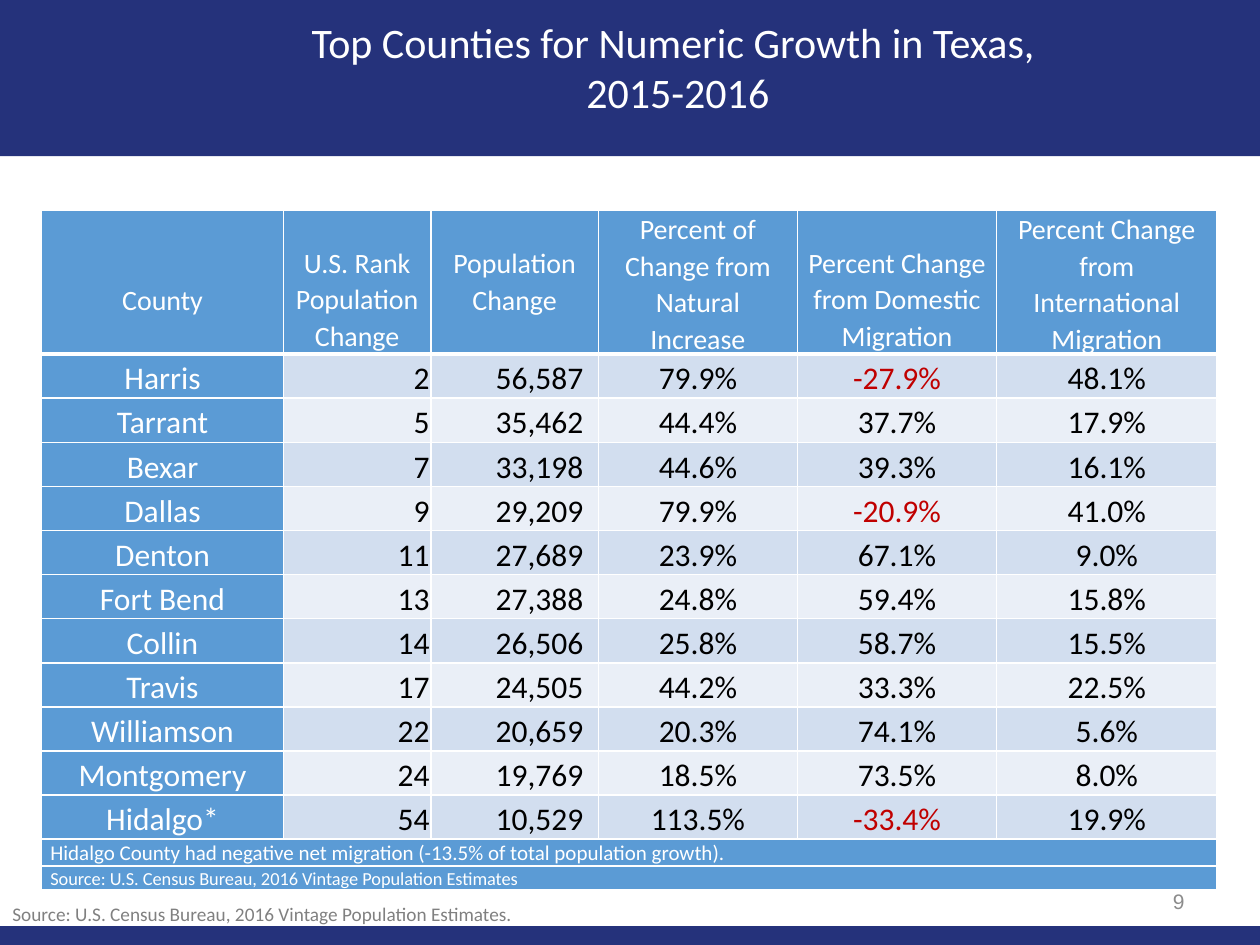
from lxml import etree
from pptx import Presentation
from pptx import util as u
from pptx.dml.color import RGBColor
from pptx.enum import shapes, text
from pptx.oxml.ns import qn

NAVY, BLUE, WHITE, BLACK, RED = "25327B", "5B9BD5", "FFFFFF", "000000", "C00000"
BANDS = ("D2DEEF", "EAEFF7")
LEFT, CENTER, RIGHT = text.PP_ALIGN.LEFT, text.PP_ALIGN.CENTER, text.PP_ALIGN.RIGHT
TOP, MIDDLE, BOTTOM = (text.MSO_ANCHOR.TOP, text.MSO_ANCHOR.MIDDLE,
                       text.MSO_ANCHOR.BOTTOM)

COL_WIDTHS = (1.92, 1.17, 1.33, 1.58, 1.58, 1.75)
HEADER_HEIGHT, COUNTY_HEIGHT, NOTE_HEIGHTS = 1.13, 0.35, (0.21, 0.19)
HEADER_LINE = 0.29
# heading, lines of space left below it
HEADERS = (
    ("County", 1),
    ("U.S. Rank Population Change", 0),
    ("Population Change", 1),
    ("Percent of Change from Natural Increase", 0),
    ("Percent Change from Domestic Migration", 0),
    ("Percent Change from International Migration", 0),
)
COUNTIES = (
    ("Harris", "2", "56,587", "79.9%", "-27.9%", "48.1%"),
    ("Tarrant", "5", "35,462", "44.4%", "37.7%", "17.9%"),
    ("Bexar", "7", "33,198", "44.6%", "39.3%", "16.1%"),
    ("Dallas", "9", "29,209", "79.9%", "-20.9%", "41.0%"),
    ("Denton", "11", "27,689", "23.9%", "67.1%", "9.0%"),
    ("Fort Bend", "13", "27,388", "24.8%", "59.4%", "15.8%"),
    ("Collin", "14", "26,506", "25.8%", "58.7%", "15.5%"),
    ("Travis", "17", "24,505", "44.2%", "33.3%", "22.5%"),
    ("Williamson", "22", "20,659", "20.3%", "74.1%", "5.6%"),
    ("Montgomery", "24", "19,769", "18.5%", "73.5%", "8.0%"),
    ("Hidalgo*", "54", "10,529", "113.5%", "-33.4%", "19.9%"),
)
NOTES = (
    ("Hidalgo County had negative net migration (-13.5% of total population growth).", 12),
    ("Source: U.S. Census Bureau, 2016 Vintage Population Estimates", 10.5),
)
ALIGNS = (CENTER, RIGHT, RIGHT, CENTER, CENTER, CENTER)


def rgb(color):
    return RGBColor.from_string(color)


def write(tf, content, size=18, color=BLACK, font="Calibri", align=LEFT, spacing=1.0):
    """Fill a text frame, one paragraph per line of content."""
    tf.text = content
    for p in tf.paragraphs:
        p.alignment = align
        p.line_spacing = spacing
        p.space_before = u.Pt(0)
        for r in p.runs:
            r.font.name, r.font.size, r.font.bold = font, u.Pt(size), False
            r.font.color.rgb = rgb(color)


def add_band(s, top, height):
    sp = s.shapes.add_shape(shapes.MSO_SHAPE.RECTANGLE, 0, u.Inches(top),
                            u.Inches(10), u.Inches(height))
    sp.shadow.inherit = False
    sp.fill.solid()
    sp.fill.fore_color.rgb = rgb(NAVY)
    sp.line.fill.background()
    s.shapes.title.element.addprevious(sp.element)


def set_title(s, content):
    sp = s.shapes.title
    sp.left, sp.top = u.Inches(1.92), u.Inches(0.08)
    sp.width, sp.height = u.Inches(6.92), u.Inches(0.91)
    tf = sp.text_frame
    tf.vertical_anchor = TOP
    tf.auto_size = text.MSO_AUTO_SIZE.NONE
    write(tf, content, size=24, color=WHITE, align=CENTER)


def add_text(s, box, content, anchor=TOP, wrap=True, **fmt):
    tf = s.shapes.add_textbox(*map(u.Inches, box)).text_frame
    tf.word_wrap = wrap
    tf.vertical_anchor = anchor
    write(tf, content, **fmt)


def set_borders(cell, top=1, bottom=1):
    tc_pr = cell._tc.get_or_add_tcPr()
    for side, width in (("L", 1), ("R", 1), ("T", top), ("B", bottom)):
        ln = etree.SubElement(tc_pr, qn(f"a:ln{side}"), w=str(u.Pt(width)))
        fill = etree.SubElement(ln, qn("a:solidFill"))
        etree.SubElement(fill, qn("a:srgbClr"), val=WHITE)


def set_cell(cell, content, fill, margins, top=1, bottom=1, **fmt):
    """Write and colour a cell; margins are left, top, right, bottom."""
    set_borders(cell, top, bottom)
    cell.fill.solid()
    cell.fill.fore_color.rgb = rgb(fill)
    cell.vertical_anchor = BOTTOM
    (cell.margin_left, cell.margin_top,
     cell.margin_right, cell.margin_bottom) = map(u.Inches, margins)
    write(cell.text_frame, content, **fmt)


def fill_header(table):
    for col, (label, lines_below) in enumerate(HEADERS):
        set_cell(table.cell(0, col), label, BLUE,
                 (0.07, 0, 0.07, lines_below * HEADER_LINE), bottom=3,
                 size=16, color=WHITE, align=CENTER, spacing=1.07)


def fill_counties(table):
    for row, values in enumerate(COUNTIES, 1):
        for col, value in enumerate(values):
            fill = BANDS[(row - 1) % 2] if col else BLUE
            color = WHITE if col == 0 else RED if value.startswith("-") else BLACK
            edge = 0.01 if col < 3 else 0
            right = 0.12 if col == 2 else edge
            set_cell(table.cell(row, col), value, fill, (edge, edge, right, 0),
                     top=3 if row == 1 else 1, color=color, align=ALIGNS[col])


def fill_notes(table):
    last = len(COL_WIDTHS) - 1
    for row, (note, size) in enumerate(NOTES, 1 + len(COUNTIES)):
        cell = table.cell(row, 0)
        cell.merge(table.cell(row, last))
        set_cell(cell, note, BLUE, (0.07, 0, 0.07, 0),
                 size=size, color=WHITE, spacing=1.07)


def add_county_table(s):
    heights = (HEADER_HEIGHT, *[COUNTY_HEIGHT] * len(COUNTIES), *NOTE_HEIGHTS)
    table = s.shapes.add_table(
        len(heights), len(COL_WIDTHS), u.Inches(0.33), u.Inches(1.67),
        u.Inches(sum(COL_WIDTHS)), u.Inches(sum(heights))).table
    for column, width in zip(table.columns, COL_WIDTHS):
        column.width = u.Inches(width)
    for row, height in zip(table.rows, heights):
        row.height = u.Inches(height)
    fill_header(table)
    fill_counties(table)
    fill_notes(table)


def main():
    prs = Presentation()
    prs.slide_width, prs.slide_height = u.Inches(10), u.Inches(7.5)
    s = prs.slides.add_slide(prs.slide_layouts[5])
    add_band(s, 0, 1.24)
    add_band(s, 7.35, 0.15)
    set_title(s, "Top Counties for Numeric Growth in Texas, \n2015-2016")
    add_text(s, (7.17, 6.95, 2.33, 0.4), "9", anchor=MIDDLE,
             size=12, color="8C8C8C", font="Arial", align=RIGHT)
    add_text(s, (0, 7.11, 4.24, 0.29),
             "Source: U.S. Census Bureau, 2016 Vintage Population Estimates.",
             wrap=False, size=11, color="808080")
    add_county_table(s)
    prs.save("out.pptx")


if __name__ == "__main__":
    main()
